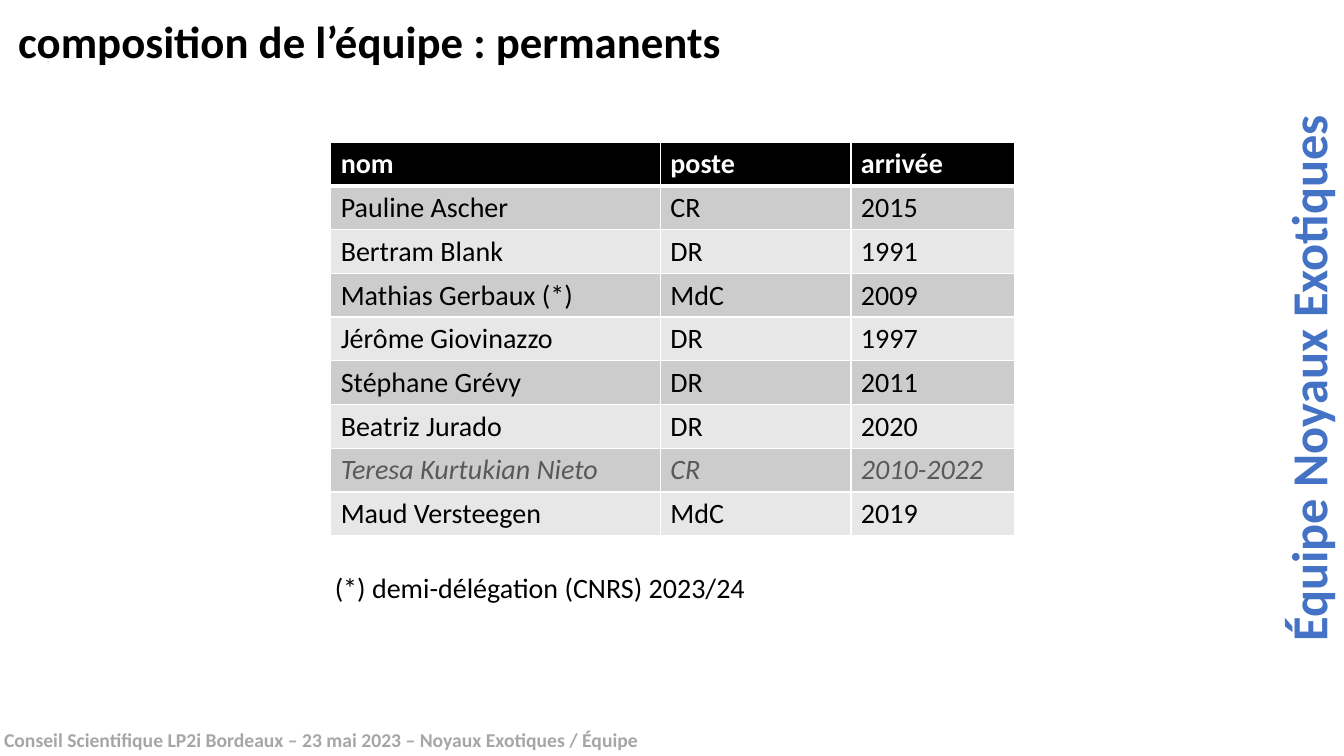
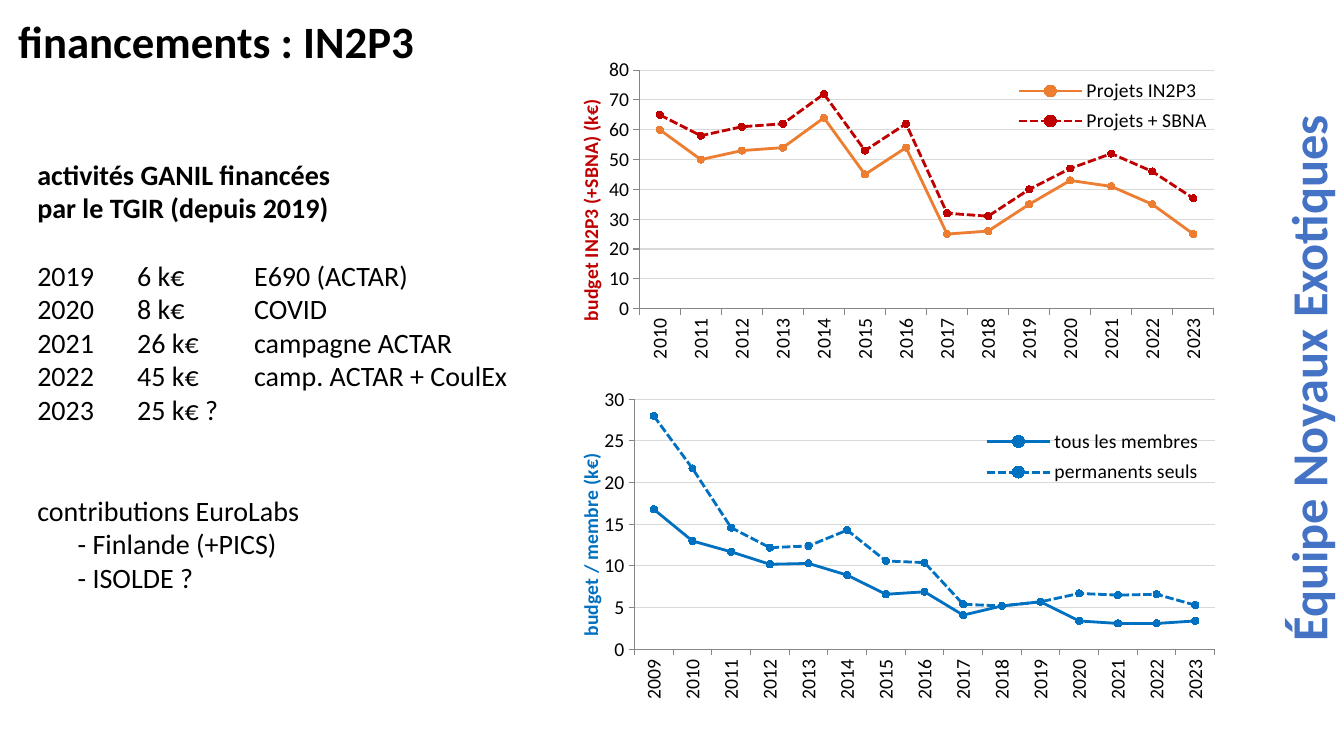
from lxml import etree
from pptx import Presentation
from pptx import util as u
from pptx.chart.data import CategoryChartData
from pptx.dml.color import RGBColor
from pptx.enum import chart as ch, dml, text
from pptx.oxml.ns import qn

BLACK, WHITE, BLUE, RED, ORANGE = "000000", "FFFFFF", "0070C0", "C00000", "ED7D31"
ACCENT, GREY, GRID, AXIS, DEPARTED = "4472C4", "A6A6A6", "D9D9D9", "868686", "595959"
BANDS = ("E7E7E7", "CCCCCC")


def rgb(value):
    return RGBColor.from_string(value)


def child(parent, tag, **attributes):
    return etree.SubElement(parent, qn(tag), attributes)


def place(parent, index, **fractions):
    previous = parent.find(qn("c:layout"))
    if previous is not None:
        parent.remove(previous)
    layout = etree.Element(qn("c:layout"))
    parent.insert(index, layout)
    manual = child(layout, "c:manualLayout")
    if index == 0:
        child(manual, "c:layoutTarget", val="inner")
    for side in ("x", "y"):
        child(manual, f"c:{side}Mode", val="edge")
    for side, fraction in fractions.items():
        child(manual, f"c:{side}", val=str(fraction))


class Deck:
    """Holds the shared style and the slide being built."""

    font = "Calibri"

    def __init__(self):
        self.prs = Presentation()
        self.prs.slide_width, self.prs.slide_height = u.Inches(13.33), u.Inches(7.5)
        self.slide = None

    def style(self, font, size, color=BLACK, bold=False, italic=False):
        font.name, font.size = self.font, u.Pt(size)
        font.bold, font.italic = bold, italic
        font.color.rgb = rgb(color)

    def new_slide(self, title):
        self.slide = self.prs.slides.add_slide(self.prs.slide_layouts[6])
        width = {"c": 7.17, "f": 4.11}[title[0]]
        self.label(title, (0.14, 0.1, width, 0.62), 32, bold=True)
        team = self.label("Équipe Noyaux Exotiques", (10.24, 3.4, 5.48, 0.71), 36, ACCENT, True)
        team.rotation = 270
        team.text_frame.paragraphs[0].alignment = text.PP_ALIGN.CENTER

    def label(self, words, box, size, color=BLACK, bold=False):
        shape = self.slide.shapes.add_textbox(*map(u.Inches, box))
        frame = shape.text_frame
        frame.word_wrap = False
        frame.margin_left = frame.margin_right = u.Inches(0.04)
        frame.margin_top = frame.margin_bottom = u.Inches(0.04)
        frame.text = words
        for paragraph in frame.paragraphs:
            for run in paragraph.runs:
                self.style(run.font, size, color, bold)
        return shape

    def footer(self, words):
        self.label(words, (0, 7.18, 6.42, 0.32), 14, GREY, True)

    def tabs(self, paragraph, *stops):
        tab_list = child(paragraph._p.get_or_add_pPr(), "a:tabLst")
        for stop in stops:
            child(tab_list, "a:tab", pos=str(u.Inches(stop)), algn="l")

    def table(self, rows, left, top, widths, row_height, departed):
        grid = self.slide.shapes.add_table(
            len(rows), len(widths), u.Inches(left), u.Inches(top),
            u.Inches(sum(widths)), u.Inches(row_height * len(rows))).table
        for column, width in zip(grid.columns, widths):
            column.width = u.Inches(width)
        for r, row in enumerate(rows):
            gone = row[0] == departed
            color = WHITE if r == 0 else DEPARTED if gone else BLACK
            for c, words in enumerate(row):
                cell = grid.cell(r, c)
                cell.text = words
                self.style(cell.text_frame.paragraphs[0].runs[0].font, 20, color, r == 0, gone)
                self.borders(cell, r)
                cell.fill.solid()
                cell.fill.fore_color.rgb = rgb(BLACK if r == 0 else BANDS[r % 2])

    def borders(self, cell, row):
        widths = {"L": 1, "R": 1, "T": 3 if row == 1 else 1, "B": 3 if row == 0 else 1}
        for side, width in widths.items():
            line = child(cell._tc.get_or_add_tcPr(), f"a:ln{side}", w=str(u.Pt(width)))
            child(child(line, "a:solidFill"), "a:srgbClr", val=WHITE)

    def line_chart(self, years, series, box, scale, heading, plot, legend):
        data = CategoryChartData()
        data.categories = [str(year) for year in years]
        for name, values, *_ in series:
            data.add_series(name, values)
        chart = self.slide.shapes.add_chart(
            ch.XL_CHART_TYPE.LINE_MARKERS, *map(u.Inches, box), data).chart
        chart.has_title = False
        self.style(chart.font, 14)
        chart.plots[0].vary_by_categories = False
        for curve, (_, _, color, dash) in zip(chart.plots[0].series, series):
            curve.smooth = False
            curve.format.line.width = u.Pt(2)
            curve.format.line.color.rgb = rgb(color)
            if dash:
                curve.format.line.dash_style = dml.MSO_LINE.SQUARE_DOT
            curve.marker.style, curve.marker.size = ch.XL_MARKER_STYLE.CIRCLE, 5
            curve.marker.format.fill.solid()
            curve.marker.format.fill.fore_color.rgb = rgb(color)
            curve.marker.format.line.color.rgb = rgb(color)
        self.axes(chart, scale, *heading)
        chart.has_legend = True
        chart.legend.position = ch.XL_LEGEND_POSITION.RIGHT
        chart.legend.include_in_layout = False
        self.style(chart.legend.font, 14)
        place(chart.legend._element, 1, **legend)
        place(chart._chartSpace.chart.plotArea, 0, **plot)

    def axes(self, chart, scale, words, color, x, y):
        years, budget = chart.category_axis, chart.value_axis
        for axis in (years, budget):
            axis.major_tick_mark = ch.XL_TICK_MARK.OUTSIDE
            axis.minor_tick_mark = ch.XL_TICK_MARK.NONE
            axis.format.line.color.rgb = rgb(AXIS)
            self.style(axis.tick_labels.font, 14)
        years._element.find(qn("c:txPr")).find(qn("a:bodyPr")).set("rot", "-5400000")
        budget.minimum_scale = 0
        budget.maximum_scale, budget.major_unit = scale
        budget.tick_labels.number_format = "0"
        budget.tick_labels.number_format_is_linked = False
        budget.has_major_gridlines = True
        budget.major_gridlines.format.line.color.rgb = rgb(GRID)
        budget.major_gridlines.format.line.width = u.Pt(0.75)
        frame = budget.axis_title.text_frame
        frame.text = words
        self.style(frame.paragraphs[0].runs[0].font, 14, color, True)
        frame._txBody.find(qn("a:bodyPr")).set("rot", "-5400000")
        place(budget.axis_title._element, 1, x=x, y=y)


def team_slide(deck):
    deck.new_slide("composition de l’équipe : permanents")
    members = [
        ("nom", "poste", "arrivée"),
        ("Pauline Ascher", "CR", "2015"),
        ("Bertram Blank", "DR", "1991"),
        ("Mathias Gerbaux (*)", "MdC", "2009"),
        ("Jérôme Giovinazzo", "DR", "1997"),
        ("Stéphane Grévy", "DR", "2011"),
        ("Beatriz Jurado", "DR", "2020"),
        ("Teresa Kurtukian Nieto", "CR", "2010-2022"),
        ("Maud Versteegen", "MdC", "2019"),
    ]
    deck.table(members, 3.28, 1.41, (3.27, 1.89, 1.62), 0.43, "Teresa Kurtukian Nieto")
    deck.label("(*) demi-délégation (CNRS) 2023/24", (3.28, 5.62, 4.31, 0.42), 20)
    deck.footer("Conseil Scientifique LP2i Bordeaux – 23 mai 2023 – Noyaux Exotiques / Équipe")


def funding_slide(deck):
    deck.new_slide("financements : IN2P3")
    lines = [
        "activités GANIL financées",
        "par le TGIR (depuis 2019)",
        "2019\t6 k€\tE690 (ACTAR)",
        "2020\t8 k€\tCOVID",
        "2021\t26 k€\tcampagne ACTAR",
        "2022\t45 k€\tcamp. ACTAR + CoulEx",
        "2023\t25 k€ ?",
        "contributions EuroLabs",
        "\t- Finlande (+PICS)",
        "\t- ISOLDE ?",
    ]
    funding = deck.label("\n".join(lines), (0.33, 1.52, 4.79, 4.46), 20)
    paragraphs = funding.text_frame.paragraphs
    for heading in paragraphs[:2]:
        heading.runs[0].font.bold = True
    for grant in paragraphs[2:7]:
        deck.tabs(grant, 0.99, 2.15)
    for contribution in paragraphs[8:]:
        deck.tabs(contribution, 0.4)
    paragraphs[2].space_before = u.Pt(24)
    paragraphs[7].space_before = u.Pt(48)

    deck.line_chart(
        range(2010, 2024),
        [("Projets IN2P3", (60, 50, 53, 54, 64, 45, 54, 25, 26, 35, 43, 41, 35, 25), ORANGE, False),
         ("Projets + SBNA", (65, 58, 61, 62, 72, 53, 62, 32, 31, 40, 47, 52, 46, 37), RED, True)],
        (5.62, 0.53, 6.73, 3.26), (80, 10),
        ("budget IN2P3 (+SBNA) (k€)", RED, 0.01, 0.13),
        dict(x=0.107, y=0.051, w=0.847, h=0.726), dict(x=0.65, y=0.06, w=0.31, h=0.2))
    deck.line_chart(
        range(2009, 2024),
        [("tous les membres",
          (16.8, 13, 11.7, 10.2, 10.3, 8.9, 6.6, 6.9, 4.1, 5.2, 5.7, 3.4, 3.1, 3.1, 3.4), BLUE, False),
         ("permanents seuls",
          (28, 21.7, 14.6, 12.2, 12.4, 14.3, 10.6, 10.4, 5.4, 5.2, 5.7, 6.7, 6.5, 6.6, 5.3), BLUE, True)],
        (5.62, 3.79, 6.73, 3.37), (30, 5),
        ("budget / membre (k€)", BLUE, 0.01, 0.2),
        dict(x=0.1, y=0.051, w=0.855, h=0.736), dict(x=0.61, y=0.12, w=0.33, h=0.2))


def main():
    deck = Deck()
    team_slide(deck)
    funding_slide(deck)
    deck.prs.save("out.pptx")


if __name__ == "__main__":
    main()
